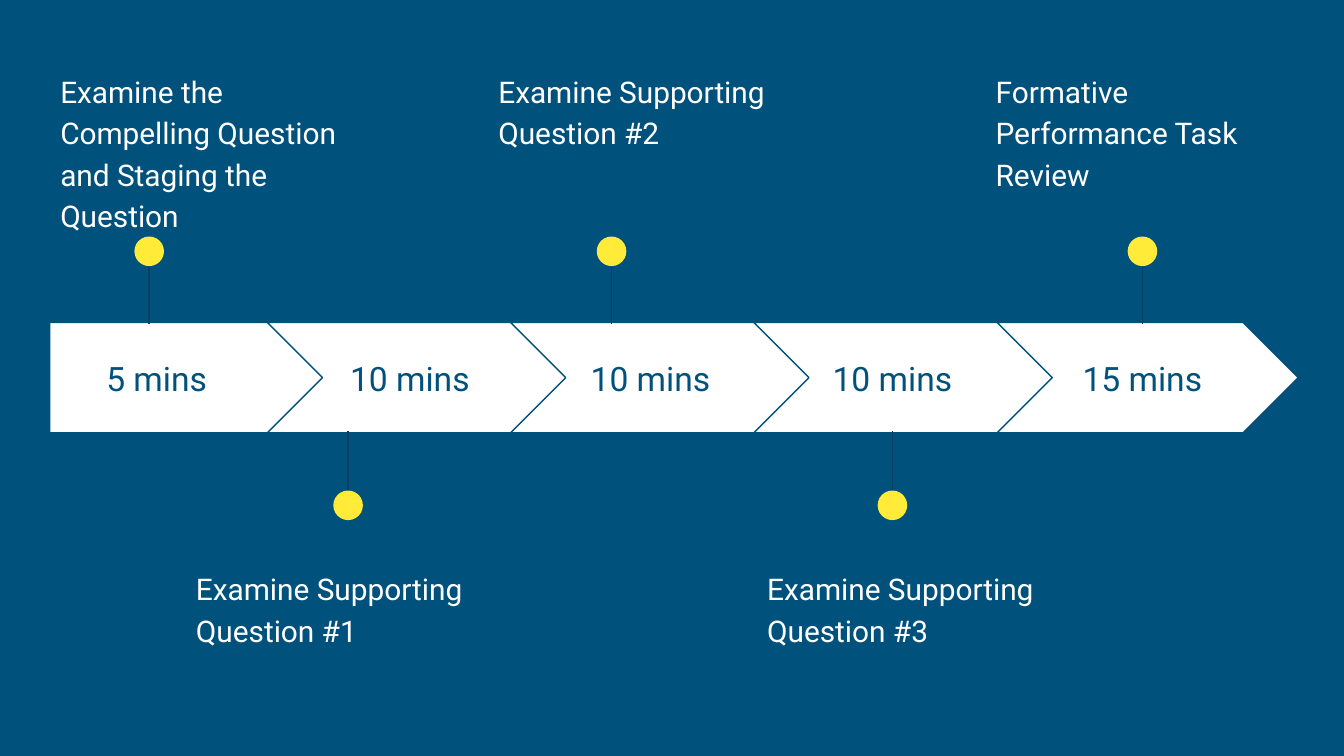
from collections import namedtuple

from lxml.etree import SubElement
from pptx import Presentation
from pptx.dml.color import RGBColor
from pptx.enum.shapes import MSO_CONNECTOR, MSO_SHAPE
from pptx.enum.text import MSO_ANCHOR as Anchor, PP_ALIGN as Align
from pptx.oxml.ns import qn
from pptx.util import Inches, Pt

NAVY = RGBColor(0x00, 0x51, 0x7C)
DARK_NAVY = RGBColor(0x00, 0x40, 0x65)
YELLOW = RGBColor(0xFF, 0xEB, 0x38)
WHITE = RGBColor(0xFF, 0xFF, 0xFF)

SLIDE_W = 10
SLIDE_H = SLIDE_W * 9 / 16
BAND_LEFT, BAND_TOP, BAND_H = 0.37, 2.4, 0.82
STEP = 1.81            # distance from one chevron to the next
CHEVRON_LEFT = 0.18    # grid origin of the chevron columns
CHEVRON_W, FIRST_W = 2.24, 2.05
DOT = 0.22
STEM = 0.61
TOPIC_W, TOPIC_H = 2.45, 0.99
DURATION_TOP, DURATION_H = 2.56, 0.51

DURATION_STYLE = {"size": Pt(18), "name": "Roboto"}
TOPIC_STYLE = {"size": Pt(16), "name": "Roboto"}

# Rows of the layout: top of the topic, of the dot and of the stem
Row = namedtuple("Row", "topic dot stem")
ABOVE = Row(0.41, 1.76, 1.8)
BELOW = Row(4.11, 3.65, 3.21)

Stage = namedtuple("Stage", "duration duration_x duration_w topic topic_x marker_x")
STAGES = [
    Stage("5 mins", 0.37, 1.59,
          "Examine the Compelling Question and Staging the Question", 0.35, 1.11),
    Stage("10 mins", 2.33, 1.44, "Examine Supporting Question #1", 1.36, 2.59),
    Stage("10 mins", 4.12, 1.44, "Examine Supporting Question #2", 3.61, 4.55),
    Stage("10 mins", 5.92, 1.44, "Examine Supporting Question #3", 5.61, 6.64),
    Stage("15 mins", 7.78, 1.44, "Formative Performance Task Review", 7.31, 8.5),
]


def add_filled(slide, kind, box, color):
    shape = slide.shapes.add_shape(kind, *map(Inches, box))
    shape.shadow.inherit = False
    shape.fill.solid()
    shape.fill.fore_color.rgb = color
    shape.line.fill.background()
    return shape


def add_arrow(slide, index):
    """Add one link of the band; the first has a flat left end."""
    if index == 0:
        kind, left, width = MSO_SHAPE.PENTAGON, BAND_LEFT, FIRST_W
    else:
        kind, left, width = MSO_SHAPE.CHEVRON, CHEVRON_LEFT + index * STEP, CHEVRON_W
    arrow = add_filled(slide, kind, (left, BAND_TOP, width, BAND_H), WHITE)
    arrow.line.color.rgb = NAVY
    arrow.line.width = Pt(0.75)


def add_text(slide, text, box, style, color, anchor=Anchor.TOP, **paragraph_format):
    frame = slide.shapes.add_textbox(*map(Inches, box)).text_frame
    frame_format = {"word_wrap": True, "vertical_anchor": anchor}
    for side in ("left", "right", "top", "bottom"):
        frame_format[f"margin_{side}"] = Inches(0.1)
    paragraph = frame.paragraphs[0]
    run = paragraph.add_run()
    run.text = text
    run.font.color.rgb = color
    for target, values in ((frame, frame_format), (paragraph, paragraph_format),
                           (run.font, style)):
        for name, value in values.items():
            setattr(target, name, value)


def add_marker(slide, center, row):
    """Add the thin stem and the dot that tie a topic to the band."""
    stem = slide.shapes.add_connector(
        MSO_CONNECTOR.STRAIGHT,
        *map(Inches, (center, row.stem, center, row.stem + STEM)))
    stem.line.color.rgb = DARK_NAVY
    stem.line.width = Pt(0.75)
    SubElement(stem._element.spPr, qn("a:effectLst"))
    add_filled(slide, MSO_SHAPE.OVAL, (center - DOT / 2, row.dot, DOT, DOT), YELLOW)


def add_stage(slide, index, stage):
    row = BELOW if index % 2 else ABOVE
    add_arrow(slide, index)
    add_text(slide, stage.duration,
             (stage.duration_x, DURATION_TOP, stage.duration_w, DURATION_H),
             DURATION_STYLE, NAVY, Anchor.MIDDLE, alignment=Align.CENTER)
    add_marker(slide, stage.marker_x, row)
    add_text(slide, stage.topic, (stage.topic_x, row.topic, TOPIC_W, TOPIC_H),
             TOPIC_STYLE, WHITE, alignment=Align.LEFT, line_spacing=1.15)


def main():
    prs = Presentation()
    prs.slide_width, prs.slide_height = Inches(SLIDE_W), Inches(SLIDE_H)
    slide = prs.slides.add_slide(prs.slide_layouts[6])
    slide.background.fill.solid()
    slide.background.fill.fore_color.rgb = NAVY
    for index, stage in enumerate(STAGES):
        add_stage(slide, index, stage)
    prs.save("out.pptx")


if __name__ == "__main__":
    main()
